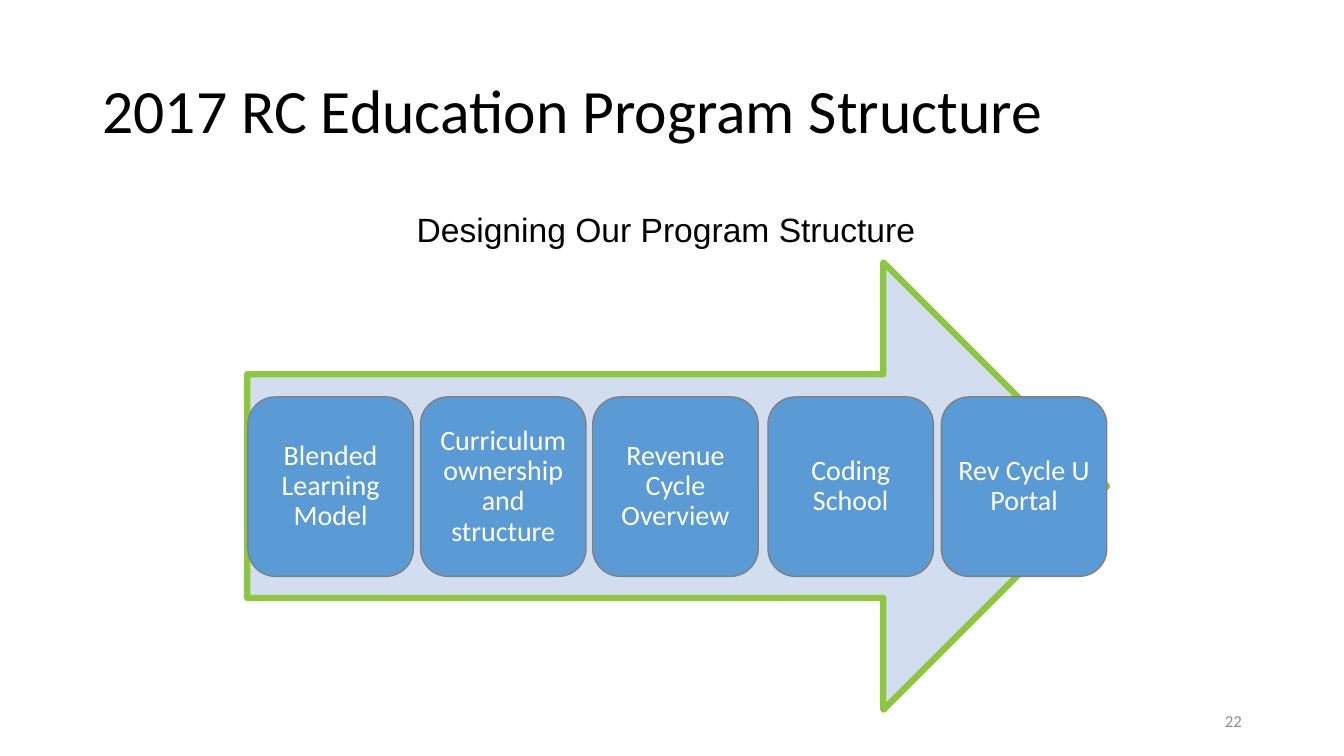
from dataclasses import dataclass

from lxml.etree import SubElement
from pptx import Presentation
from pptx.dml.color import RGBColor
from pptx.enum.shapes import MSO_SHAPE as Preset
from pptx.enum.text import MSO_ANCHOR as Anchor, PP_ALIGN as Align
from pptx.oxml.ns import qn
from pptx.shapes.autoshape import Shape
from pptx.slide import Slide
from pptx.util import Pt


@dataclass(frozen=True)
class Theme:
    heading_font: str = "Calibri"
    subtitle_font: str = "Arial"
    black: str = "000000"
    white: str = "FFFFFF"
    page_grey: str = "8C8C8C"
    arrow_fill: str = "D2DEEF"
    arrow_line: str = "8DC63F"
    step_fill: str = "5B9BD5"
    step_line: str = "808080"
    title_size: float = 44
    subtitle_size: float = 24
    step_size: float = 20
    page_size: float = 12


@dataclass(frozen=True)
class Box:
    left: float
    top: float
    width: float
    height: float

    def lengths(self) -> tuple[Pt, Pt, Pt, Pt]:
        return Pt(self.left), Pt(self.top), Pt(self.width), Pt(self.height)


@dataclass(frozen=True)
class TextStyle:
    """Type and layout of a text; insets run left, top, right, bottom."""
    size: float
    color: str
    font: str = "Calibri"
    align: Align = Align.LEFT
    anchor: Anchor = Anchor.MIDDLE
    line_spacing: float = 1.0
    insets: tuple[float, float, float, float] = (7.2, 3.6, 7.2, 3.6)


@dataclass(frozen=True)
class Label:
    text: str
    box: Box
    style: TextStyle


@dataclass(frozen=True)
class Step:
    text: str
    left: float


THEME = Theme()

LABELS = [
    Label("2017 RC Education Program Structure", Box(66.24, 28.8, 828, 104.4),
          TextStyle(THEME.title_size, THEME.black, line_spacing=0.9)),
    Label("22", Box(678.24, 500.4, 216, 28.8),
          TextStyle(THEME.page_size, THEME.page_grey, align=Align.RIGHT)),
    Label("Designing Our Program Structure", Box(156.24, 110.2, 634.3, 216),
          TextStyle(THEME.subtitle_size, THEME.black, THEME.subtitle_font,
                    Align.CENTER, Anchor.TOP, insets=(11.5, 39.2, 7.2, 3.6))),
]

ARROW_BOX = Box(176.6, 187.4, 614.2, 319.6)
STEP_TOP, STEP_WIDTH, STEP_HEIGHT = 283.5, 118.2, 128.2
STEP_STYLE = TextStyle(THEME.step_size, THEME.white, align=Align.CENTER,
                       line_spacing=0.9, insets=(5.76, 5.76, 5.76, 5.76))
STEPS = [
    Step("Blended Learning Model", 177.1),
    Step("Curriculum ownership and structure", 300.4),
    Step("Revenue Cycle Overview", 423.4),
    Step("Coding School", 548.6),
    Step("Rev Cycle U Portal", 672.4),
]


def write_text(shape: Shape, text: str, style: TextStyle) -> None:
    frame = shape.text_frame
    frame.word_wrap = True
    frame.vertical_anchor = style.anchor
    (frame.margin_left, frame.margin_top,
     frame.margin_right, frame.margin_bottom) = map(Pt, style.insets)
    paragraph = frame.paragraphs[0]
    paragraph.text = text
    paragraph.alignment = style.align
    paragraph.line_spacing = style.line_spacing
    paragraph.font.name = style.font
    paragraph.font.size = Pt(style.size)
    paragraph.font.color.rgb = RGBColor.from_string(style.color)


def add_label(slide: Slide, label: Label) -> None:
    shape = slide.shapes.add_textbox(*label.box.lengths())
    write_text(shape, label.text, label.style)


def add_block(slide: Slide, preset: Preset, box: Box, fill: str,
              line: str, line_width: float) -> Shape:
    """Add a flat preset shape whose outline has rounded joins."""
    shape = slide.shapes.add_shape(preset, *box.lengths())
    shape.shadow.inherit = False
    shape.fill.solid()
    shape.fill.fore_color.rgb = RGBColor.from_string(fill)
    shape.line.color.rgb = RGBColor.from_string(line)
    shape.line.width = Pt(line_width)
    SubElement(shape.element.spPr.find(qn("a:ln")), qn("a:round"))
    return shape


def add_step(slide: Slide, step: Step) -> None:
    box = Box(step.left, STEP_TOP, STEP_WIDTH, STEP_HEIGHT)
    shape = add_block(slide, Preset.ROUNDED_RECTANGLE, box,
                      THEME.step_fill, THEME.step_line, 1)
    write_text(shape, step.text, STEP_STYLE)


def main() -> None:
    presentation = Presentation()
    presentation.slide_width, presentation.slide_height = Pt(960), Pt(540)
    slide = presentation.slides.add_slide(presentation.slide_layouts[6])
    for label in LABELS:
        add_label(slide, label)
    add_block(slide, Preset.RIGHT_ARROW, ARROW_BOX,
              THEME.arrow_fill, THEME.arrow_line, 4.5)
    for step in STEPS:
        add_step(slide, step)
    presentation.save("out.pptx")


if __name__ == "__main__":
    main()
